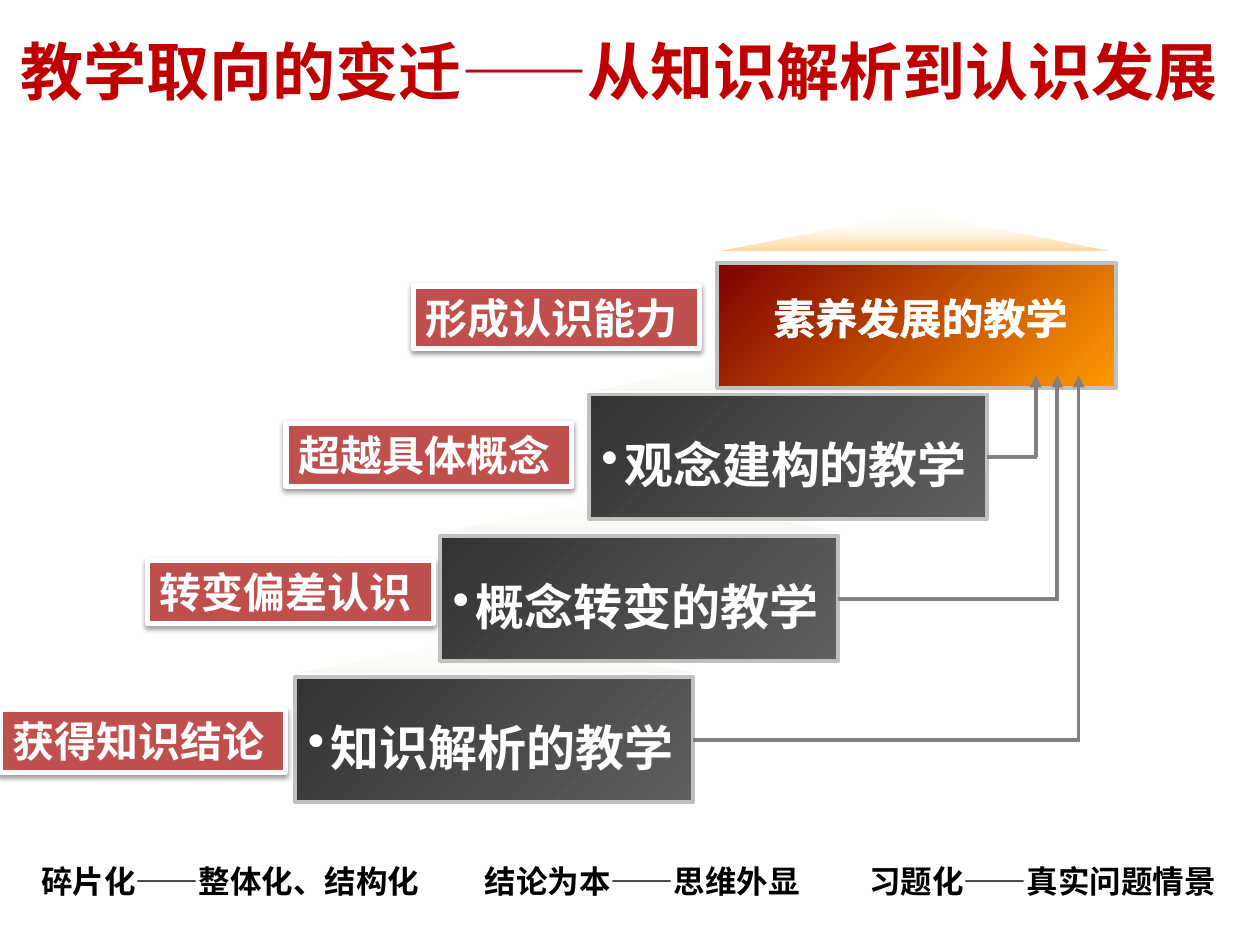
from lxml.etree import SubElement
from pptx import Presentation
from pptx.dml.color import RGBColor
from pptx.enum.shapes import MSO_CONNECTOR, MSO_SHAPE
from pptx.enum.text import MSO_ANCHOR, PP_ALIGN
from pptx.oxml import parse_xml
from pptx.oxml.ns import nsdecls, qn
from pptx.util import Pt

WHITE = RGBColor(0xFF, 0xFF, 0xFF)
BLACK = RGBColor(0, 0, 0)
TITLE_RED = RGBColor(0xC0, 0, 0)
LABEL_RED = RGBColor(0xC0, 0x50, 0x4D)
DARK_GREY = RGBColor(0x33, 0x33, 0x33)
MID_GREY = RGBColor(0x5F, 0x5F, 0x5F)
MAROON = RGBColor(0x80, 0, 0)
ORANGE = RGBColor(0xFF, 0x99, 0)
CREAM = RGBColor(0xEE, 0xEC, 0xE1)
BORDER = RGBColor(0xC0, 0xC0, 0xC0)
ARROW_GREY = RGBColor(0x80, 0x80, 0x80)

CJK = "Noto Sans CJK SC"
TITLE = "教学取向的变迁——从知识解析到认识发展"

# Lower steps: text, (left, top) of the step, x of its arrow to the goal
STEPS = [
    ("知识解析的教学", (168.8, 387), 616.3),
    ("概念转变的教学", (251.6, 306.4), 604.1),
    ("观念建构的教学", (336.6, 225.4), 591.8),
]
GOAL, GOAL_AT = "素养发展的教学", (410, 150.5)
STEP_W, STEP_H = 227.5, 71.3
ROOF_W, ROOF_H = 229.7, 21.6

# Text, (left, top), Latin font
LABELS = [
    ("获得知识结论", (0, 405.4), "Arial"),
    ("转变偏差认识", (84.2, 320.4), CJK),
    ("超越具体概念", (163.4, 241.9), CJK),
    ("形成认识能力", (236.2, 163.4), CJK),
]
LABEL_W, LABEL_H = 163.4, 36

# Text, left, width
SHIFTS = [
    ("碎片化——整体化、结构化", 16.6, 234),
    ("结论为本——思维外显", 270, 197.3),
    ("习题化——真实问题情景", 489.6, 215.3),
]

prs = Presentation()
prs.slide_width, prs.slide_height = Pt(720), Pt(540)
slide = prs.slides.add_slide(prs.slide_layouts[6])
shapes = slide.shapes


def add_preset(kind, left, top, width, height):
    shape = shapes.add_shape(kind, Pt(left), Pt(top), Pt(width), Pt(height))
    shape.shadow.inherit = False
    return shape


def set_gradient(shape, colors, angle, alphas=()):
    shape.fill.gradient()
    shape.fill.gradient_angle = angle
    for stop, color in zip(shape.fill.gradient_stops, colors):
        stop.color.rgb = color
    for node, alpha in zip(shape._element.spPr.iter(qn("a:srgbClr")), alphas):
        SubElement(node, qn("a:alpha"), val=str(alpha * 1000))


def set_text(shape, text, size, color, font=CJK, align=PP_ALIGN.LEFT):
    paragraph = shape.text_frame.paragraphs[0]
    paragraph.text = text
    paragraph.alignment = align
    run = paragraph.runs[0]
    run.font.size, run.font.bold, run.font.name = Pt(size), True, font
    run.font.color.rgb = color
    SubElement(run.font._element, qn("a:ea"), typeface=CJK)
    return paragraph


def add_text(text, left, top, width, height, size, color, wrap=False, **style):
    box = shapes.add_textbox(Pt(left), Pt(top), Pt(width), Pt(height))
    box.text_frame.word_wrap = wrap
    return box, set_text(box, text, size, color, **style)


def add_roof(left, bottom, width, color):
    """Triangle that fades out upwards from the top edge of a step."""
    roof = add_preset(MSO_SHAPE.ISOSCELES_TRIANGLE, left, bottom - ROOF_H, width, ROOF_H)
    set_gradient(roof, (WHITE, color), 270, (0, 40))
    roof.line.fill.background()


def add_step(left, top, colors):
    step = add_preset(MSO_SHAPE.RECTANGLE, left, top, STEP_W, STEP_H)
    set_gradient(step, colors, 315)
    step.line.color.rgb, step.line.width = BORDER, Pt(2.25)
    return step


def add_line(x1, y1, x2, y2, arrow=False):
    line = shapes.add_connector(MSO_CONNECTOR.STRAIGHT, Pt(x1), Pt(y1), Pt(x2), Pt(y2))
    line.line.color.rgb, line.line.width = ARROW_GREY, Pt(2.25)
    if arrow:
        SubElement(line.line._get_or_add_ln(), qn("a:tailEnd"), type="triangle")
    SubElement(line._element.spPr, qn("a:effectLst"))
    return line


for _, (left, top), _ in STEPS:
    add_roof(left, top - 2.5, ROOF_W, CREAM)
steps = [add_step(left, top, (DARK_GREY, MID_GREY)) for _, (left, top), _ in STEPS]

goal_left, goal_top = GOAL_AT
add_step(goal_left, goal_top, (MAROON, ORANGE))
_, goal_text = add_text(GOAL, goal_left + 17.7, goal_top + 13, 196.6, 39.6, 24, WHITE,
                        align=PP_ALIGN.CENTER)
goal_text.runs[0].font._element.insert(0, parse_xml(
    f'<a:ln {nsdecls("a")} w="9525"><a:solidFill><a:srgbClr val="{WHITE}"/>'
    '</a:solidFill></a:ln>'))
add_roof(goal_left + 0.4, goal_top - 7.2 + 0.0, 225.4, ORANGE)

goal_bottom = goal_top + STEP_H - 7.2
for step, (text, (left, top), arrow_x) in zip(steps, STEPS):
    middle = top + STEP_H / 2
    add_line(left + STEP_W, middle, arrow_x + 0.9, middle).begin_connect(step, 3)
    add_line(arrow_x, middle, arrow_x, goal_bottom, arrow=True)
    _, paragraph = add_text(text, left, top + 19.5, 226, 41, 28, WHITE, wrap=True,
                            align=PP_ALIGN.CENTER)
    properties = paragraph._p.get_or_add_pPr()
    bullet_color = SubElement(properties, qn("a:buClr"))
    SubElement(bullet_color, qn("a:srgbClr"), val=str(WHITE))
    SubElement(properties, qn("a:buChar"), char="•")

for text, (left, top), font in LABELS:
    label = add_preset(MSO_SHAPE.RECTANGLE, left, top, LABEL_W, LABEL_H)
    label.fill.solid()
    label.fill.fore_color.rgb = LABEL_RED
    label.line.color.rgb, label.line.width = WHITE, Pt(3)
    label.text_frame.vertical_anchor = MSO_ANCHOR.MIDDLE
    set_text(label, text, 24, WHITE, font=font)
    label._element.spPr.find(qn("a:effectLst")).append(parse_xml(
        f'<a:outerShdw {nsdecls("a")} blurRad="{Pt(3.1)}" dist="{Pt(1.6)}" dir="5400000" '
        'rotWithShape="0"><a:srgbClr val="000000"><a:alpha val="38000"/></a:srgbClr>'
        '</a:outerShdw>'))

for text, left, width in SHIFTS:
    add_text(text, left, 488.9, width, 51.1, 18, BLACK, font="Calibri")

title, _ = add_text(TITLE, 11.5, 18.7, 696.2, 43.9, 36, TITLE_RED)
frame = title.text_frame
frame.margin_left = frame.margin_right = frame.margin_top = frame.margin_bottom = 0

prs.save("out.pptx")
